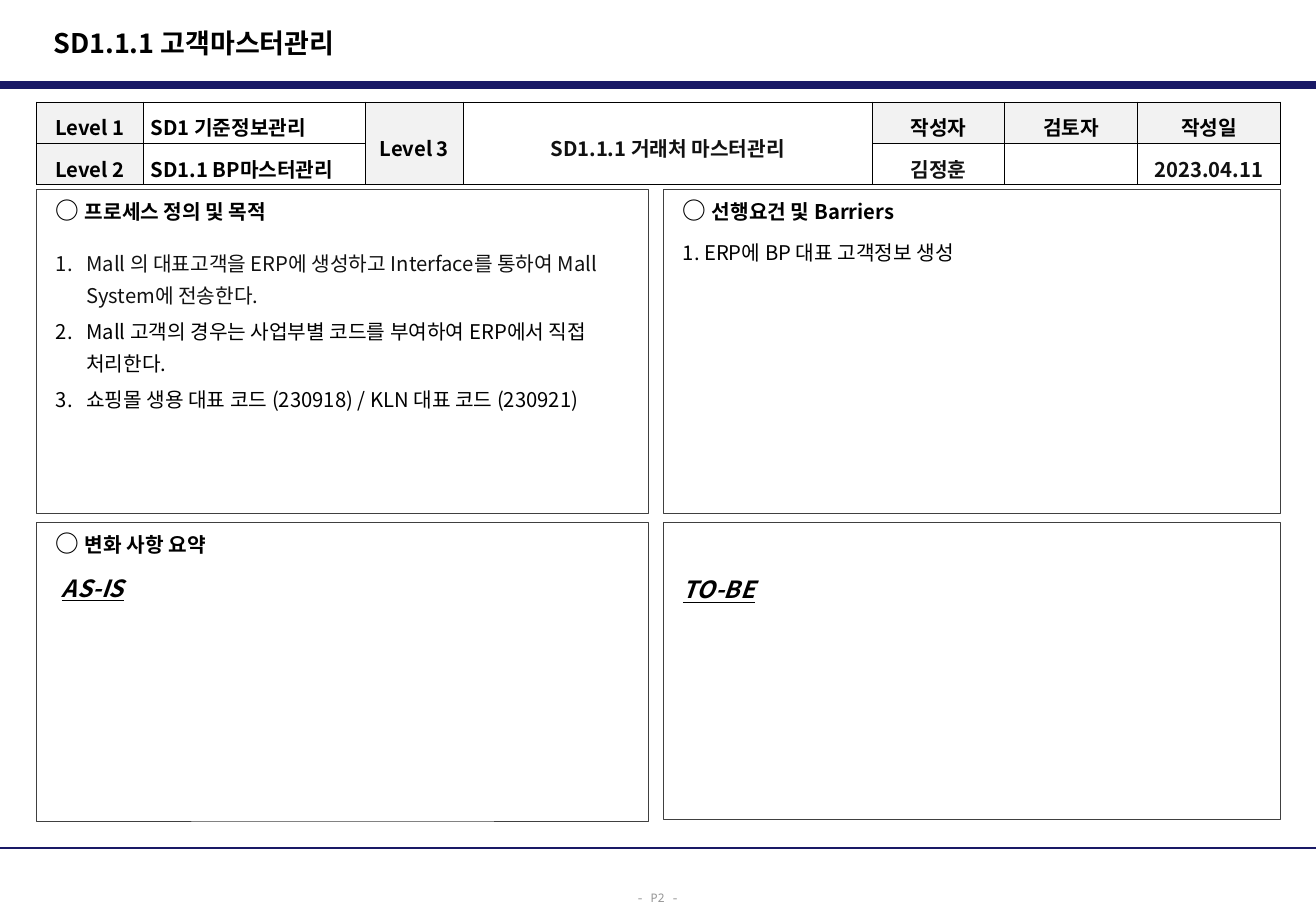
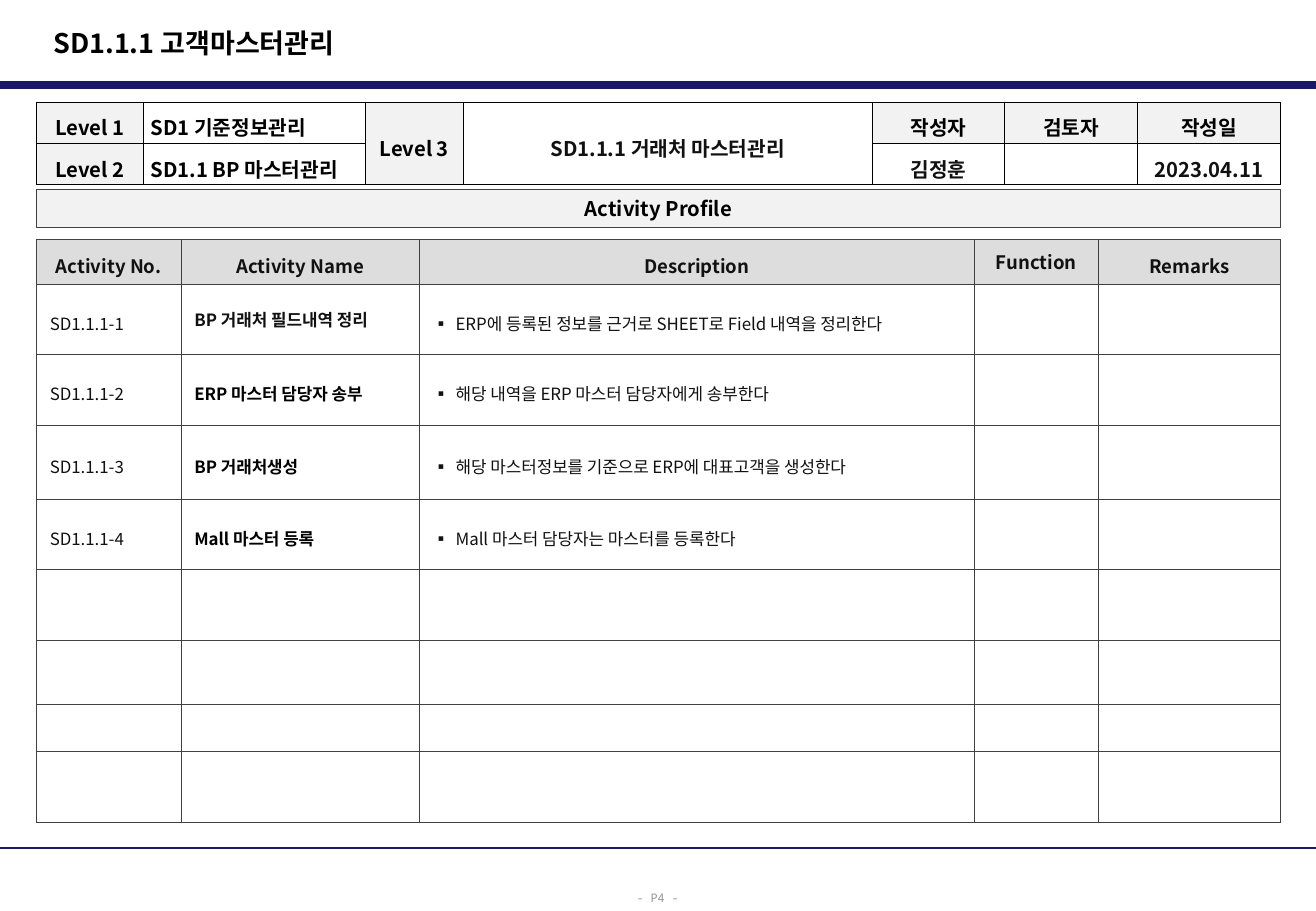
from lxml import etree
from pptx import Presentation
from pptx import util as u
from pptx.dml.color import RGBColor
from pptx.enum import shapes, text
from pptx.oxml import ns

PX = 9144  # 100 px to the inch
FACE = "Noto Sans CJK KR"
MONO = "Noto Sans Mono"
NAVY = RGBColor(0x19, 0x19, 0x66)
BLACK = RGBColor(0, 0, 0)
INK = RGBColor(0x11, 0x11, 0x11)
EDGE = RGBColor(0x40, 0x40, 0x40)
MUTE = RGBColor(0x96, 0x96, 0x96)
PALE = RGBColor(0xF2, 0xF2, 0xF2)
GREY = RGBColor(0xDD, 0xDD, 0xDD)
LEFT, MID = text.PP_ALIGN.LEFT, text.PP_ALIGN.CENTER

LEAD = 30     # left edge of the content
WIDE = 1024   # width of the content
TOP = 156     # first content line under the process table


def px(n):
    return u.Emu(n * PX)


def sub(parent, tag, **attrs):
    return etree.SubElement(parent, ns.qn(tag), attrs)


class Deck:
    """Holds the presentation, its style and the current slide."""

    def __init__(self):
        self.prs = Presentation()
        self.prs.slide_width, self.prs.slide_height = px(1083), px(750)

    def page(self, title, number):
        layout = self.prs.slide_layouts[5]
        self.slide = self.prs.slides.add_slide(layout)
        self.rule(70, 4.5)
        self.rule(698, 1.5)
        head = self.slide.shapes.title
        head.left, head.top, head.width, head.height = map(px, (34, 16, 711, 38))
        frame = self.frame(head, (10, 5, 10, 5), text.MSO_ANCHOR.MIDDLE)
        self.add(frame, title, size=16, bold=True)
        foot = self.slide.shapes.add_textbox(*map(px, (514, 725, 56, 25)))
        frame = self.frame(foot, (10, 5, 10, 5))
        frame.word_wrap = False
        self.add(frame, number, size=7, tint=MUTE, line=1.3, face=MONO)

    def rule(self, y, width):
        line = self.slide.shapes.add_connector(
            shapes.MSO_CONNECTOR.STRAIGHT, 0, px(y), px(1083), px(y))
        line.line.color.rgb = NAVY
        line.line.width = u.Pt(width)
        sub(line._element.spPr, "a:effectLst")

    def frame(self, shape, inset, anchor=text.MSO_ANCHOR.TOP):
        frame = shape.text_frame
        frame.word_wrap = True
        frame.auto_size = text.MSO_AUTO_SIZE.NONE
        frame.vertical_anchor = anchor
        (frame.margin_left, frame.margin_top,
         frame.margin_right, frame.margin_bottom) = map(px, inset)
        return frame

    def box(self, x, y, w, h, top=5, fill=None, anchor=text.MSO_ANCHOR.TOP):
        """Draws an outlined panel and returns its text frame."""
        shape = self.slide.shapes.add_shape(
            shapes.MSO_SHAPE.RECTANGLE, *map(px, (x, y, w, h)))
        shape.shadow.inherit = False
        shape.line.color.rgb = EDGE
        shape.line.width = u.Pt(0.5)
        self.paint(shape.fill, fill)
        return self.frame(shape, (16, top, 10, 5), anchor)

    def paint(self, fill, tint):
        if tint is None:
            fill.background()
        else:
            fill.solid()
            fill.fore_color.rgb = tint

    def add(self, frame, words, **look):
        """Appends a paragraph, using the first one while it is empty."""
        par = frame.paragraphs[0]
        if par.runs:
            par = frame.add_paragraph()
        if words:
            par.add_run().text = words
        self.style(par, **look)
        return par

    def style(self, par, size=12, bold=False, tint=BLACK, align=LEFT, gap=0,
              line=None, mark=None, hang=0, pad=0, face=FACE):
        """Formats a paragraph; mark is "1." for numbers or a bullet sign."""
        par.alignment = align
        if line:
            par.line_spacing = line
        if gap:
            par.space_before = u.Pt(gap)
        props = par._p.get_or_add_pPr()
        if hang or pad:
            props.set("marL", str(px(hang + pad)))
            props.set("indent", str(px(-hang)))
        if mark:
            sub(props, "a:buFont", typeface=FACE)
            if mark == "1.":
                sub(props, "a:buAutoNum", type="arabicPeriod")
            else:
                sub(props, "a:buChar", char=mark)
        font = par.font
        font.size, font.bold, font.name = u.Pt(size), bold, face
        font.color.rgb = tint
        sub(props.find(ns.qn("a:defRPr")), "a:ea", typeface=face)

    def head(self, frame, words):
        par = self.add(frame, "○ ", bold=True, line=u.Pt(17))
        par.runs[0].font.size = u.Pt(14)
        par.add_run().text = words

    def state(self, frame, words, **look):
        par = self.add(frame, words, size=14, bold=True, line=u.Pt(20), **look)
        par.font.italic = par.font.underline = True

    def grid(self, y, cols, rows, data, edge, inset, look):
        """Draws a table; look(row, col) gives a fill and a paragraph style."""
        table = self.slide.shapes.add_table(
            len(rows), len(cols), px(LEAD), px(y), px(sum(cols)), px(sum(rows))).table
        table.first_row = table.horz_banding = False
        for col, w in zip(table.columns, cols):
            col.width = px(w)
        for r, h in enumerate(rows):
            table.rows[r].height = px(h)
            for c in range(len(cols)):
                cell = table.cell(r, c)
                fill, style = look(r, c)
                self.border(cell, edge)
                self.paint(cell.fill, fill)
                cell.vertical_anchor = text.MSO_ANCHOR.MIDDLE
                cell.margin_left = cell.margin_right = px(inset[0])
                cell.margin_top = cell.margin_bottom = px(inset[1])
                words = data[r][c] if r < len(data) and c < len(data[r]) else ""
                self.add(cell.text_frame, words, **style)
        return table

    def border(self, cell, tint):
        props = cell._tc.get_or_add_tcPr()
        for side in ("L", "R", "T", "B"):
            line = sub(props, "a:ln" + side, w=str(u.Pt(0.5)))
            sub(sub(line, "a:solidFill"), "a:srgbClr", val=str(tint))

    def process(self, second):
        """Draws the table that names the process on every slide."""
        data = [
            ["Level 1", "SD1 기준정보관리", "Level 3", "SD1.1.1 거래처 마스터관리",
             "작성자", "검토자", "작성일"],
            ["Level 2", second, "", "", "김정훈", "", "2023.04.11"],
        ]

        def look(r, c):
            label = c in (0, 2) or (r == 0 and c > 3)
            dark = label or c == 1
            return PALE if label else None, dict(
                bold=True, line=1.3, align=LEFT if c == 1 else MID,
                tint=BLACK if dark else INK)

        table = self.grid(84, [88, 183, 80, 337, 109, 109, 118], [34, 34],
                          data, BLACK, (6, 1), look)
        for c in (2, 3):
            table.cell(0, c).merge(table.cell(1, c))


def define(deck):
    deck.page("SD1.1.1 고객마스터관리", "- P2 -")
    deck.process("SD1.1 BP마스터관리")
    aim = deck.box(LEAD, TOP, 504, 267)
    deck.head(aim, "프로세스 정의 및 목적")
    steps = [
        "Mall 의 대표고객을 ERP에 생성하고 Interface를 통하여 Mall System에 전송한다.",
        "Mall 고객의 경우는 사업부별 코드를 부여하여 ERP에서 직접 처리한다.",
        "쇼핑몰 생용 대표 코드 (230918) / KLN 대표 코드 (230921)",
    ]
    for i, step in enumerate(steps):
        deck.add(aim, step, mark="1.", hang=25, line=u.Pt(19),
                 gap=2.4 if i else 11.6, tint=BLACK if i else INK)
    needs = deck.box(546, TOP, 508, 267)
    deck.head(needs, "선행요건 및 Barriers")
    deck.add(needs, "1. ERP에 BP 대표 고객정보 생성", line=u.Pt(17.4), gap=6.6)
    past = deck.box(LEAD, 430, 504, 246)
    deck.head(past, "변화 사항 요약")
    deck.state(past, "AS-IS", gap=6.6, pad=5)
    deck.state(deck.box(546, 430, 508, 245, top=39), "TO-BE")


def profile(deck):
    deck.page("SD1.1.1 고객마스터관리", "- P4 -")
    deck.process("SD1.1 BP 마스터관리")
    band = deck.box(LEAD, TOP, WIDE, 31, fill=PALE, anchor=text.MSO_ANCHOR.MIDDLE)
    band.margin_left = px(10)
    deck.add(band, "Activity Profile", bold=True, align=MID)
    data = [
        ["Activity No.", "Activity Name", "Description", "Function", "Remarks"],
        ["SD1.1.1-1", "BP 거래처 필드내역 정리",
         "ERP에 등록된 정보를 근거로 SHEET로 Field 내역을 정리한다"],
        ["SD1.1.1-2", "ERP 마스터 담당자 송부",
         "해당 내역을 ERP 마스터 담당자에게 송부한다"],
        ["SD1.1.1-3", "BP 거래처생성",
         "해당 마스터정보를 기준으로 ERP에 대표고객을 생성한다"],
        ["SD1.1.1-4", "Mall 마스터 등록", "Mall 마스터 담당자는 마스터를 등록한다"],
    ]

    def look(r, c):
        line = 1.0 if (r, c) in ((0, 3), (1, 1)) else 1.3
        if r == 0:
            return GREY, dict(size=11, bold=True, tint=INK, align=MID, line=line)
        style = dict(size=10, bold=c == 1, line=line,
                     tint=BLACK if c == 1 and r > 1 else INK)
        if c == 2 and r < len(data):
            style.update(mark="▪", hang=19)
        return None, style

    deck.grid(197, [119, 196, 457, 102, 150],
              [37, 58, 58, 61, 58, 58, 53, 39, 58], data, EDGE, (11, 4), look)


def main():
    deck = Deck()
    define(deck)
    profile(deck)
    deck.prs.save("out.pptx")


if __name__ == "__main__":
    main()
